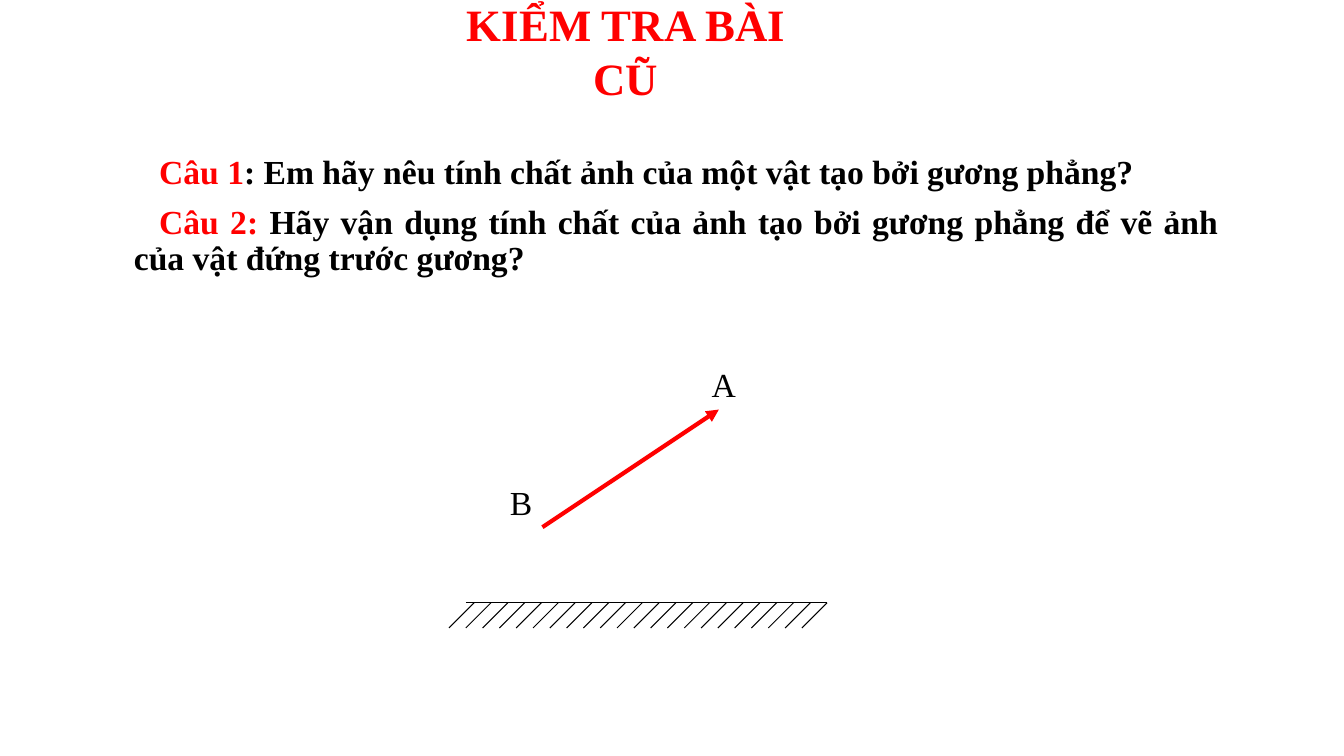
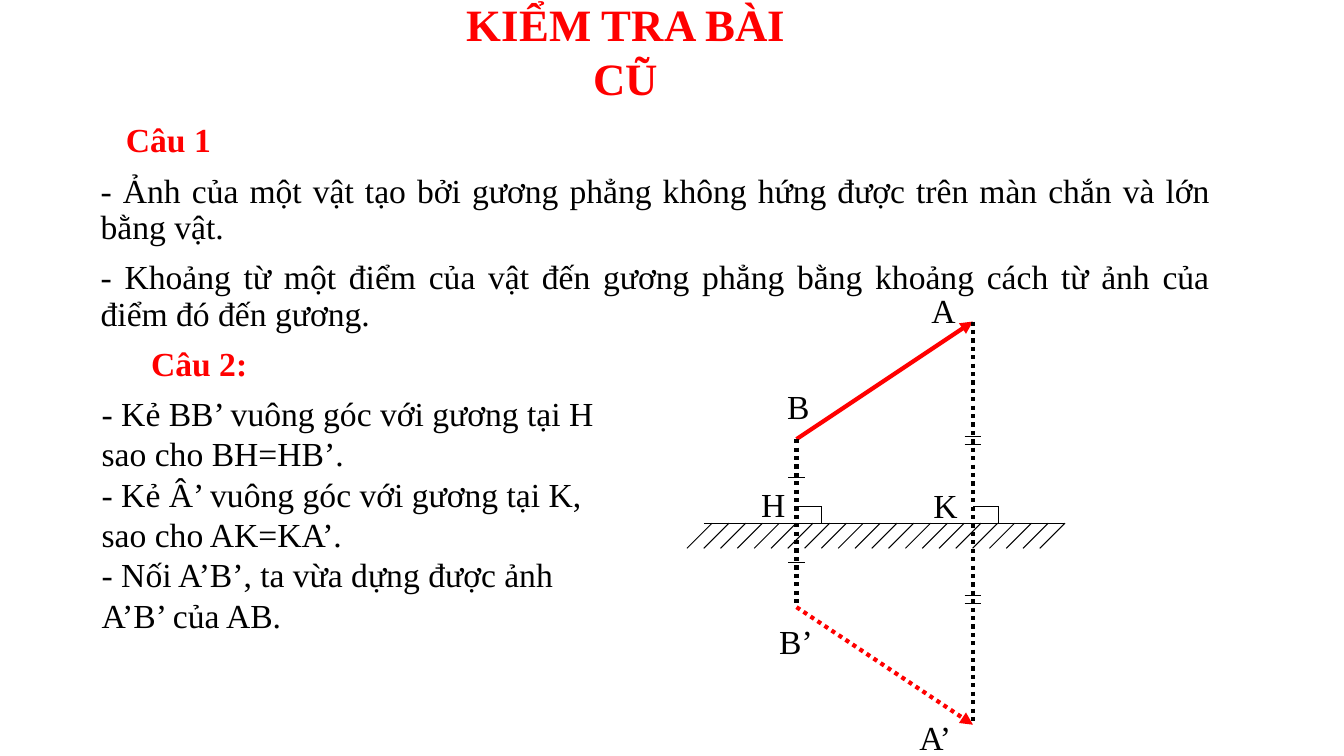
from lxml.etree import SubElement
from pptx import Presentation
from pptx.dml.color import RGBColor
from pptx.enum.dml import MSO_LINE as Dash
from pptx.enum.shapes import MSO_CONNECTOR as Conn, MSO_SHAPE as Shape
from pptx.enum.text import MSO_ANCHOR as Anchor, PP_ALIGN as Align
from pptx.oxml.ns import qn
from pptx.util import Inches, Pt

RED, BLACK, FONT = "FF0000", "000000", "Times New Roman"
TITLE = "KIỂM TRA BÀI CŨ"
U = 1 / 12  # drawing grid, inches
HATCHES = 22
RUN, RISE = 21 * U, 14 * U  # from B to A

# Paragraph: (left margin, first line indent, runs); run: (text, colour, bold)
ASK = [
    (0.25, 0.25, [("Câu 1", RED, True),
                  (": Em hãy nêu tính chất ảnh của một vật tạo bởi gương phẳng?", BLACK, True)]),
    (0.25, 0.25, [("Câu 2: ", RED, True),
                  ("Hãy vận dụng tính chất của ảnh tạo bởi gương phẳng để vẽ ảnh "
                   "của vật đứng trước gương?", BLACK, True)]),
]
ANSWER = [
    (0, 0.25, [("Câu 1 ", RED, True)]),
    (0, 0, [("- Ảnh của một vật tạo bởi gương phẳng không hứng được trên màn chắn "
             "và lớn bằng vật.", BLACK, False)]),
    (0, 0, [("- Khoảng từ một điểm của vật đến gương phẳng bằng khoảng cách từ ảnh "
             "của điểm đó đến gương.", BLACK, False)]),
    (0.25, 0.25, [("Câu 2:", RED, True)]),
]
STEPS = [(0, 0, [(line, BLACK, False)]) for line in (
    "- Kẻ BB’ vuông góc với gương tại H sao cho BH=HB’.",
    "- Kẻ Â’ vuông góc với gương tại K, sao cho AK=KA’.",
    "- Nối A’B’, ta vừa dựng được ảnh A’B’ của AB.",
)]
ASK_TAGS = [("B", 4.96, 4.73), ("A", 6.96, 3.56)]
ANSWER_TAGS = [("A", 9.14, 2.83), ("B", 7.71, 3.78), ("B’", 7.63, 6.11),
               ("A’", 9.02, 7.06), ("H", 7.45, 4.75), ("K", 9.16, 4.76)]


def rgb(code):
    return RGBColor.from_string(code)


def write(box, paras, size=24, align=Align.LEFT, space=0, lead=1, anchor=Anchor.TOP):
    frame = box.text_frame
    frame.word_wrap, frame.vertical_anchor = True, anchor
    for i, (left, first, runs) in enumerate(paras):
        para = frame.paragraphs[0] if i == 0 else frame.add_paragraph()
        para.alignment, para.line_spacing = align, lead
        para.space_before = Pt(space)
        props = para._p.get_or_add_pPr()
        props.set("marL", str(Inches(left)))
        props.set("indent", str(Inches(first)))
        for words, color, bold in runs:
            run = para.add_run()
            run.text = words
            font = run.font
            font.name, font.size, font.bold = FONT, Pt(size), bold
            font.color.rgb = rgb(color)


def text(slide, at, paras, **style):
    write(slide.shapes.add_textbox(*map(Inches, at)), paras, **style)


def body(slide, at, paras):
    text(slide, at, paras, align=Align.JUSTIFY, space=10, lead=0.9)


def line(shapes, start, end, color=BLACK, width=0.75, dash=None, arrow=False):
    link = shapes.add_connector(Conn.STRAIGHT, *map(Inches, (*start, *end)))
    link.line.color.rgb, link.line.width = rgb(color), Pt(width)
    if dash:
        link.line.dash_style = dash
    if arrow:
        SubElement(link.line._get_or_add_ln(), qn("a:tailEnd"), type="triangle")
    SubElement(link._element.spPr, qn("a:effectLst"))


def mirror(slide, x, y):
    """Draw a hatched mirror whose left end is at x, y."""
    shapes = slide.shapes.add_group_shape().shapes
    line(shapes, (x, y), (x + (2 * HATCHES - 1) * U, y))
    for i in range(HATCHES):
        top = x + (2 * i + 1) * U
        line(shapes, (top, y), (top - 3 * U, y + 3 * U))


def start(deck, tags):
    """Add a slide with its title and the point labels."""
    slide = deck.slides.add_slide(deck.slide_layouts[6])
    head = slide.shapes.add_shape(Shape.FLOWCHART_TERMINATOR, *map(Inches, (4.21, 0, 4, 1)))
    head.shadow.inherit = False
    head.fill.background()
    head.line.fill.background()
    write(head, [(0, 0, [(TITLE, RED, True)])], size=32,
          align=Align.CENTER, anchor=Anchor.MIDDLE)
    for tag, x, y in tags:
        text(slide, (x, y, 0.6, 0.5), [(0, 0, [(tag, BLACK, False)])])
    return slide


def ask(deck):
    slide = start(deck, ASK_TAGS)
    body(slide, (0.98, 1.49, 11.2, 1.83), ASK)
    mirror(slide, 4.62, 5.98)
    x, y = 5.38, 5.23
    line(slide.shapes, (x, y), (x + RUN, y - RISE), RED, 3, arrow=True)


def answer(deck):
    slide = start(deck, ANSWER_TAGS)
    shapes = slide.shapes
    body(slide, (0.9, 1.18, 11.2, 1.83), ANSWER)
    text(slide, (0.91, 3.85, 5.15, 2.52), STEPS)
    y, bx = 5.19, 7.9
    ax, near = bx + RUN, 10 * U
    far = near + RISE
    mirror(slide, 6.98, y)
    line(shapes, (bx, y - near), (ax, y - far), RED, 3, arrow=True)
    line(shapes, (bx, y + near), (ax, y + far), RED, 3, Dash.ROUND_DOT, True)
    mid = y - 0.03  # centre of the equal-length ticks
    for x, reach, ticks in ((bx, near, [0.42]), (ax, far, [0.75, 0.83])):
        line(shapes, (x, y - reach), (x, y + reach), width=3, dash=Dash.ROUND_DOT)
        for gap in ticks:
            for level in (mid - gap, mid + gap):
                line(shapes, (x - U, level), (x + U, level))
        side, top = x + 3 * U, y - 2 * U
        line(shapes, (x, top), (side, top))
        line(shapes, (side, top), (side, y))


def main():
    deck = Presentation()
    deck.slide_width, deck.slide_height = Inches(13.33), Inches(7.5)
    ask(deck)
    answer(deck)
    deck.save("out.pptx")


if __name__ == "__main__":
    main()
